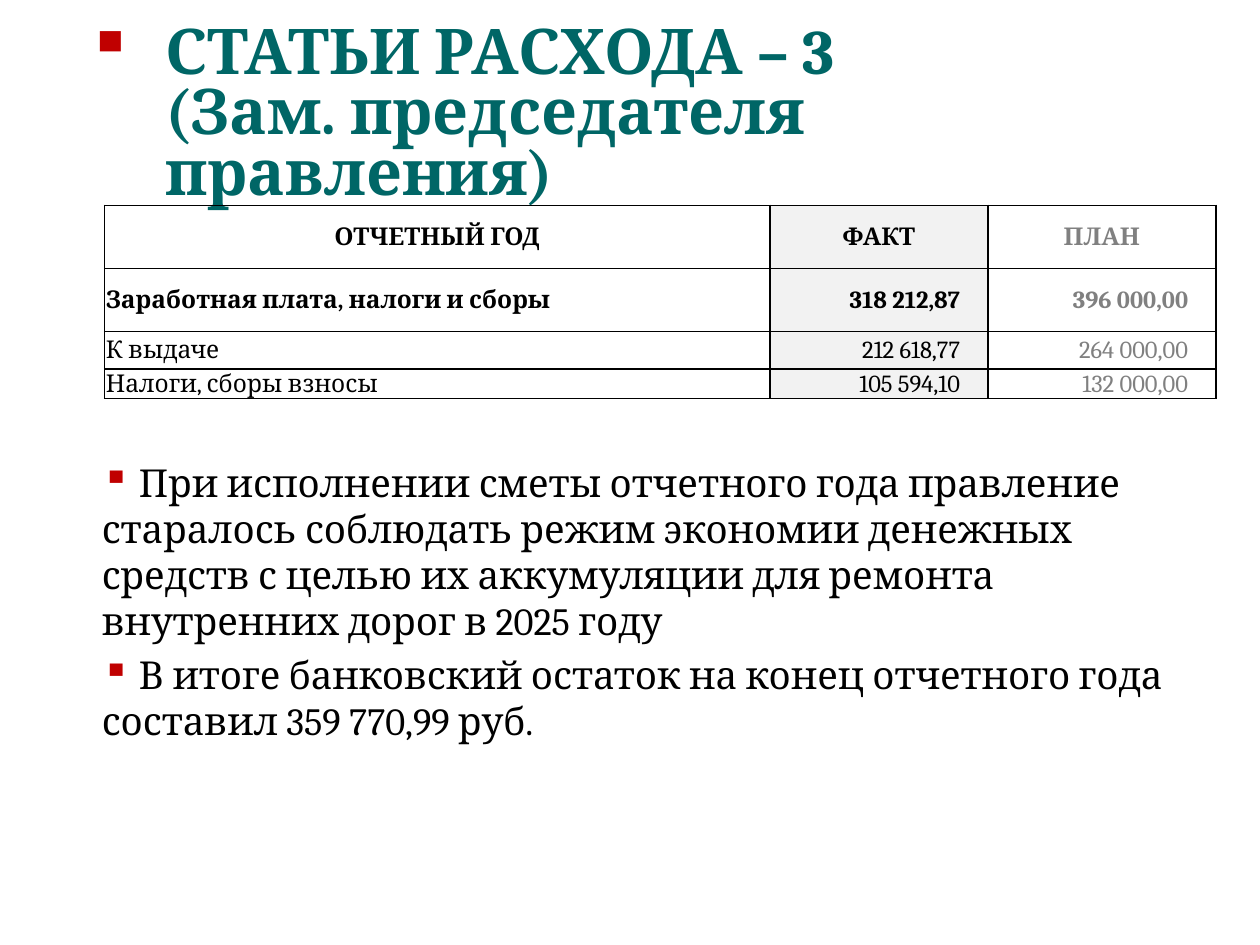
from lxml import etree
from pptx import Presentation
from pptx.dml.color import RGBColor
from pptx.enum.text import MSO_ANCHOR, MSO_AUTO_SIZE, PP_ALIGN
from pptx.oxml.ns import qn
from pptx.util import Inches, Pt

LEFT, CENTER, RIGHT = PP_ALIGN.LEFT, PP_ALIGN.CENTER, PP_ALIGN.RIGHT
MIDDLE = MSO_ANCHOR.MIDDLE
NO_AUTOFIT = MSO_AUTO_SIZE.NONE

TITLE = "СТАТЬИ РАСХОДА – 3\v(Зам. председателя правления)"
EXPENSES = [
    ("ОТЧЕТНЫЙ ГОД", "ФАКТ", "ПЛАН"),
    ("Заработная плата, налоги и сборы", "318 212,87", "396 000,00"),
    ("К выдаче", "212 618,77", "264 000,00"),
    ("Налоги, сборы взносы", "105 594,10", "132 000,00"),
]
COLUMN_WIDTHS = (5.28, 1.73, 1.81)
ROW_HEIGHTS = (0.5, 0.5, 0.3, 0.2)
COLUMN_COLORS = ("000000", "000000", "808080")
COLUMN_FILLS = (None, "F2F2F2", None)
BOLD_ROWS = 2
NOTES = [
    " При исполнении сметы отчетного года правление старалось соблюдать режим "
    "экономии денежных средств с целью их аккумуляции для ремонта внутренних "
    "дорог в 2025 году",
    " В итоге банковский остаток на конец отчетного года составил 359 770,99 руб.",
]


def color(value):
    return RGBColor.from_string(value)


def add_solid_fill(parent, value):
    fill = etree.SubElement(parent, qn("a:solidFill"))
    etree.SubElement(fill, qn("a:srgbClr"), val=value)


class SlideBuilder:
    font_name = "Cambria"
    text_color = "000000"
    bullet_color = "C00000"

    def __init__(self, slide):
        self.slide = slide

    def format_text(self, paragraph, size, text_color, bold=False, alignment=LEFT):
        paragraph.alignment = alignment
        font = paragraph.font
        font.name, font.size, font.bold = self.font_name, Pt(size), bold
        font.color.rgb = color(text_color)

    def add_bullet(self, paragraph, hanging=0):
        """Must run before the paragraph gets its font, to keep the XML order."""
        properties = paragraph._p.get_or_add_pPr()
        properties.set("marL", str(Inches(hanging)))
        properties.set("indent", str(-Inches(hanging)))
        bullet_color = etree.SubElement(properties, qn("a:buClr"))
        etree.SubElement(bullet_color, qn("a:srgbClr"), val=self.bullet_color)
        etree.SubElement(properties, qn("a:buChar"), char="▪")

    def title(self, text, left, top, width, height):
        shape = self.slide.shapes.title
        shape.left, shape.top = Inches(left), Inches(top)
        shape.width, shape.height = Inches(width), Inches(height)
        frame = shape.text_frame
        frame.text = text
        frame.auto_size = NO_AUTOFIT
        frame.vertical_anchor = MIDDLE
        paragraph = frame.paragraphs[0]
        self.add_bullet(paragraph, hanging=0.62)
        paragraph.line_spacing = 0.8
        self.format_text(paragraph, 36, "006666", bold=True)

    def bullets(self, texts, left, top, width, height):
        box = self.slide.shapes.add_textbox(
            Inches(left), Inches(top), Inches(width), Inches(height))
        frame = box.text_frame
        frame.word_wrap = True
        for index, text in enumerate(texts):
            paragraph = frame.add_paragraph() if index else frame.paragraphs[0]
            paragraph.text = text
            self.add_bullet(paragraph)
            paragraph.space_before = Pt(4.4)
            self.format_text(paragraph, 22, self.text_color)

    def border(self, cell):
        properties = cell._tc.get_or_add_tcPr()
        for side in ("a:lnL", "a:lnR", "a:lnT", "a:lnB"):
            line = etree.SubElement(properties, qn(side), w=str(Pt(1)))
            add_solid_fill(line, "000000")

    def cell(self, cell, text, row, column):
        is_amount = row > 0 and column > 0
        cell.text = text
        cell.vertical_anchor = MIDDLE
        cell.margin_left = cell.margin_top = Inches(0.01)
        cell.margin_right = Inches(0.22 if is_amount else 0.01)
        cell.margin_bottom = 0
        self.border(cell)
        if COLUMN_FILLS[column]:
            cell.fill.solid()
            cell.fill.fore_color.rgb = color(COLUMN_FILLS[column])
        else:
            cell.fill.background()
        alignment = CENTER if row == 0 else RIGHT if is_amount else LEFT
        self.format_text(cell.text_frame.paragraphs[0], 14, COLUMN_COLORS[column],
                         bold=row < BOLD_ROWS, alignment=alignment)

    def table(self, rows, left, top):
        table = self.slide.shapes.add_table(
            len(rows), len(COLUMN_WIDTHS), Inches(left), Inches(top),
            Inches(sum(COLUMN_WIDTHS)), Inches(sum(ROW_HEIGHTS))).table
        table.first_row = table.horz_banding = False
        for column, width in zip(table.columns, COLUMN_WIDTHS):
            column.width = Inches(width)
        for row, height in zip(table.rows, ROW_HEIGHTS):
            row.height = Inches(height)
        for row, texts in enumerate(rows):
            for column, text in enumerate(texts):
                self.cell(table.cell(row, column), text, row, column)


def main():
    presentation = Presentation()
    presentation.slide_width, presentation.slide_height = Inches(10), Inches(7.5)
    title_only = presentation.slide_layouts[5]
    builder = SlideBuilder(presentation.slides.add_slide(title_only))
    builder.title(TITLE, 0.59, 0.3, 8.91, 1.25)
    builder.table(EXPENSES, 0.83, 1.63)
    builder.bullets(NOTES, 0.71, 3.59, 9.06, 3.15)
    presentation.save("out.pptx")


if __name__ == "__main__":
    main()
